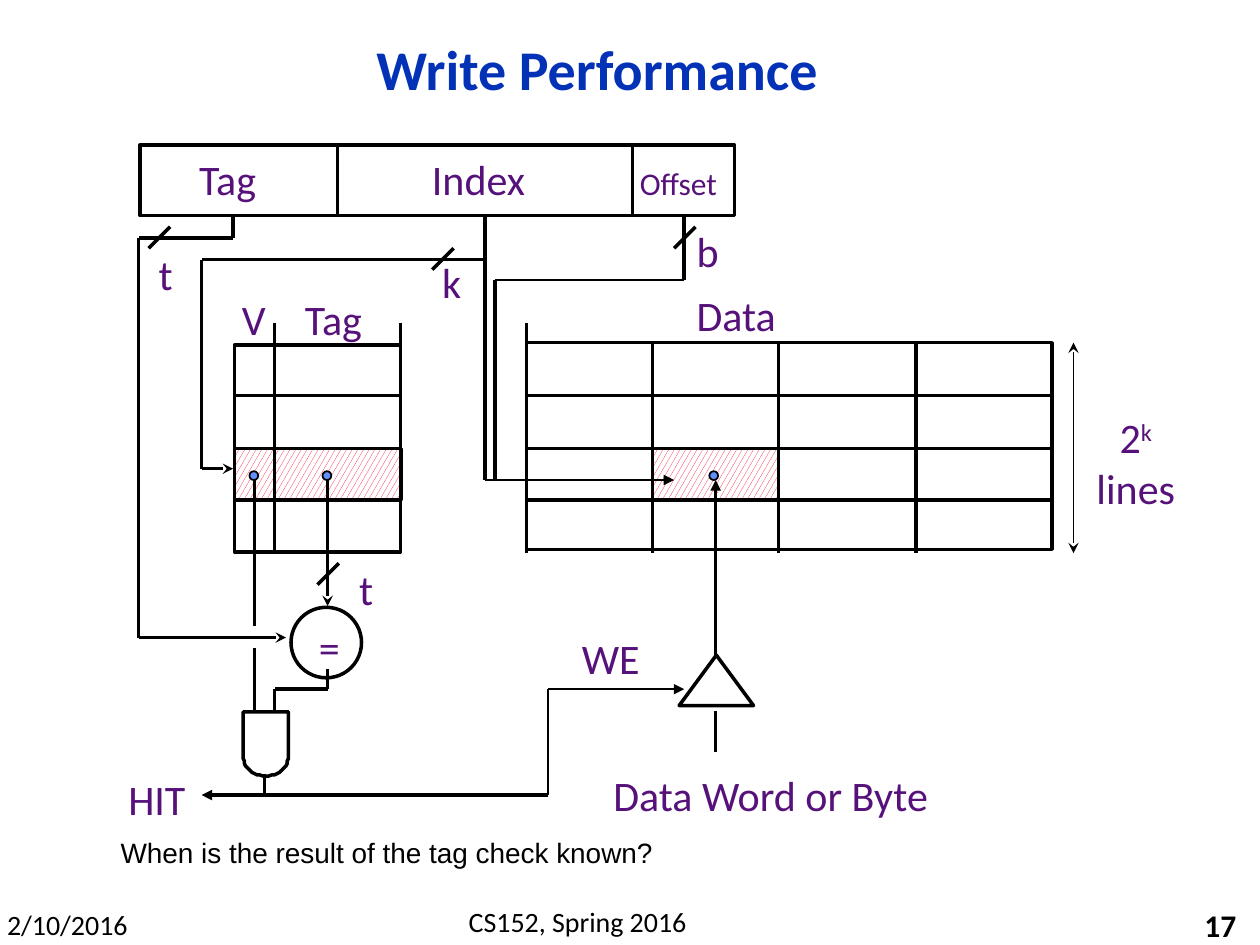
import math
from itertools import pairwise

from lxml import etree
from pptx import Presentation
from pptx import util as u
from pptx.dml.color import RGBColor
from pptx.enum import dml, shapes, text
from pptx.oxml.ns import qn

PX = u.Inches(1) // 100
COLORS = {"ink": "000000", "title": "0332B7", "label": "56127A",
          "dot": "618FFD", "hatch": "FC0128", "paper": "FFFFFF"}
KIND = shapes.MSO_SHAPE
ALIGN = text.PP_ALIGN


def rgb(name):
    return RGBColor.from_string(COLORS[name])


def px(*values):
    return [u.Emu(round(v * PX)) for v in values]


class Diagram:
    """Draws styled diagram elements on one slide."""

    def __init__(self, slide):
        self.s = slide

    def label(self, string, box, size=24, color="label", font="Calibri", bold=False,
              align=ALIGN.LEFT, wrap=False, indent=0, anchor=text.MSO_ANCHOR.TOP,
              spacing=None):
        tf = self.s.shapes.add_textbox(*px(*box)).text_frame
        frame = {"word_wrap": wrap, "vertical_anchor": anchor,
                 "margin_left": px(10 + indent)[0]}
        for key, value in frame.items():
            setattr(tf, key, value)
        for i, line in enumerate(string.split("\n")):
            p = tf.paragraphs[0] if i == 0 else tf.add_paragraph()
            p.alignment, p.line_spacing = align, spacing
            for j, part in enumerate(line.split("^")):
                r = p.add_run()
                r.text = part
                for key, value in {"size": u.Pt(size), "name": font, "bold": bold}.items():
                    setattr(r.font, key, value)
                r.font.color.rgb = rgb(color)
                if j:
                    r.font._element.set("baseline", "30000")

    def outline(self, sp, width=2, fill=None):
        sp.shadow.inherit = False
        sp.line.color.rgb = rgb("ink")
        sp.line.width = u.Pt(width)
        if fill == "hatch":
            sp.fill.patterned()
            sp.fill.pattern = dml.MSO_PATTERN.LARGE_CONFETTI
            sp.fill.fore_color.rgb = rgb("hatch")
            sp.fill.back_color.rgb = rgb("paper")
        elif fill:
            sp.fill.solid()
            sp.fill.fore_color.rgb = rgb(fill)
        else:
            sp.fill.background()

    def shape(self, kind, box, width=2, fill=None):
        self.outline(self.s.shapes.add_shape(kind, *px(*box)), width, fill)

    def outline_path(self, points):
        fb = self.s.shapes.build_freeform(*points[0], scale=PX)
        fb.add_line_segments(points[1:], close=True)
        self.outline(fb.convert_to_shape())

    def wire(self, *points, width=2, head=None, tail=None):
        legs = list(pairwise(points))
        for i, (a, b) in enumerate(legs):
            sp = self.s.shapes.add_connector(shapes.MSO_CONNECTOR.STRAIGHT, *px(*a, *b))
            sp.line.color.rgb = rgb("ink")
            sp.line.width = u.Pt(width)
            ln = sp.line._get_or_add_ln()
            if head and i == 0:
                etree.SubElement(ln, qn("a:headEnd"), type=head)
            if tail and i == len(legs) - 1:
                etree.SubElement(ln, qn("a:tailEnd"), type=tail)
            etree.SubElement(sp._element.spPr, qn("a:effectLst"))

    def grid(self, box, rows, columns):
        left, top, width, height = box
        self.shape(KIND.RECTANGLE, box)
        for y in rows:
            self.wire((left, y), (left + width, y))
        for x, y in columns:
            self.wire((x, y), (x, 439))


def draw_headings(d):
    middle = text.MSO_ANCHOR.MIDDLE
    d.label("Write Performance", (75, 17, 798, 81), size=32, color="title", bold=True,
            align=ALIGN.CENTER, wrap=True, anchor=middle, spacing=0.9)
    d.label("2/10/2016", (-5, 715, 117, 37), size=16, color="ink", align=ALIGN.CENTER)
    d.label("CS152, Spring 2016", (292, 713, 333, 37), size=16, color="ink",
            align=ALIGN.CENTER, wrap=True)
    d.label("17", (783, 718, 208, 32), size=18, color="ink", bold=True,
            align=ALIGN.RIGHT, wrap=True, anchor=middle)
    d.label("When is the result of the tag check known?", (83, 658, 448, 37), size=16,
            color="ink", font="Arial", align=ALIGN.CENTER)


def draw_arrays(d):
    rows = (314, 356, 397)
    for box in ((518, 356, 100, 42), (186, 356, 133, 41)):
        d.shape(KIND.RECTANGLE, box, 1, "hatch")
    d.grid((186, 274, 132, 164), rows, [(218, 256), (318, 256)])
    d.grid((418, 272, 417, 164), rows,
           [(418, 256), (518, 272), (618, 272), (727, 272)])
    d.shape(KIND.RECTANGLE, (111, 115, 472, 56))
    for x in (268, 502):
        d.wire((x, 114), (x, 172))
    d.wire((852, 272), (852, 439), width=1, head="stealth", tail="stealth")


def draw_logic(d):
    arc = [(211 + 18 * math.cos(a), 600 + 16 * math.sin(a))
           for a in (math.pi * i / 24 for i in range(25))]
    d.outline_path([(193, 565), (229, 565), *arc])
    d.shape(KIND.OVAL, (231, 482, 56, 56), fill="paper")
    d.shape(KIND.ISOSCELES_TRIANGLE, (539, 520, 59, 40))


def draw_wires(d):
    d.wire((185, 172), (185, 189), (110, 189), (110, 506), (227, 506), tail="stealth")
    d.wire((385, 206), (160, 206), (160, 372), (185, 372), tail="stealth")
    d.wire((385, 172), (385, 381))
    d.wire((385, 381), (535, 381), width=1, tail="triangle")
    d.wire((543, 172), (543, 222))
    d.wire((543, 222), (393, 222), width=1)
    d.wire((393, 222), (393, 381))
    d.wire((202, 381), (202, 497))
    d.wire((202, 514), (202, 564))
    d.wire((260, 381), (260, 481), tail="stealth")
    d.wire((260, 531), (260, 547), (218, 547), (218, 564))
    d.wire((210, 614), (210, 631))
    d.wire((435, 631), (160, 631), tail="triangle")
    d.wire((435, 631), (435, 547), (543, 547), width=1, tail="triangle")
    d.wire((568, 522), (568, 381), tail="triangle")
    d.wire((568, 564), (568, 597))
    for x, y in ((118, 197), (343, 214), (535, 197), (252, 464)):
        d.wire((x, y), (x + 17, y - 17))
    for x in (198, 256, 563):
        d.shape(KIND.OVAL, (x, 374, 7, 7), 1, "dot")


def draw_labels(d):
    for string, x, y, width, indent in (
            ("Tag", 133, 117, 84, 15), ("Index", 333, 117, 96, 0),
            ("V", 167, 228, 55, 15), ("Tag", 217, 228, 84, 15),
            ("Data", 543, 225, 85, 0), ("t", 108, 192, 39, 8),
            ("k", 333, 199, 43, 8), ("b", 535, 174, 46, 8),
            ("t", 267, 442, 39, 8), ("=", 235, 488, 45, 8),
            ("HIT", 92, 609, 67, 0), ("WE", 452, 497, 67, 0),
            ("Data Word or Byte", 477, 606, 276, 0)):
        d.label(string, (x, y, width, 51), indent=indent)
    d.label("Offset", (498, 125, 83, 40), size=18)
    d.label("2^k\nlines", (860, 322, 83, 91), align=ALIGN.CENTER)


def main():
    prs = Presentation()
    prs.slide_width, prs.slide_height = px(1000, 750)
    d = Diagram(prs.slides.add_slide(prs.slide_layouts[6]))
    for draw in (draw_headings, draw_arrays, draw_logic, draw_wires, draw_labels):
        draw(d)
    prs.save("out.pptx")


if __name__ == "__main__":
    main()
